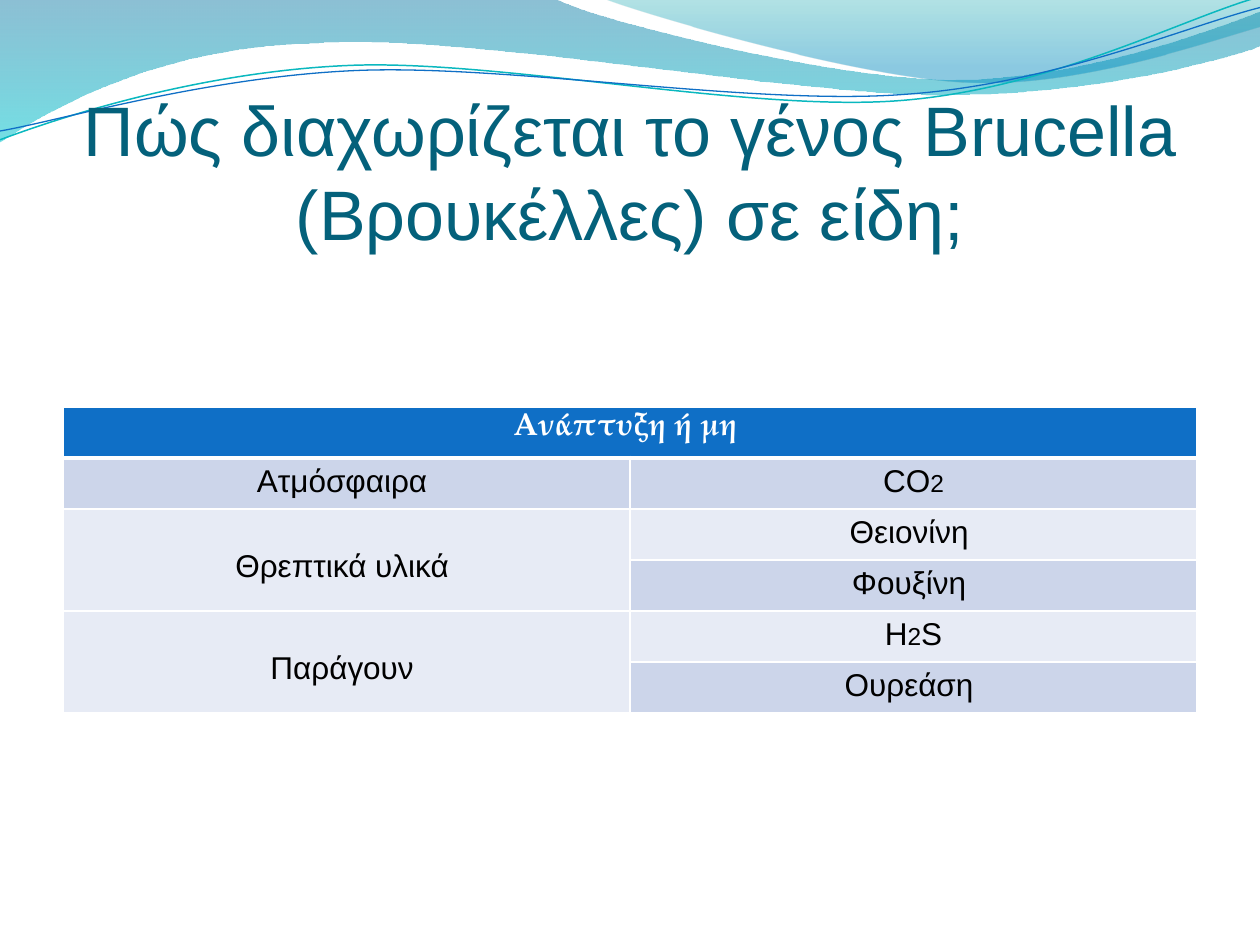
import pptx
import pptx.util
import pptx.dml.color
import pptx.enum.text
import pptx.oxml
import pptx.oxml.ns

Inches = pptx.util.Inches
RGBColor = pptx.dml.color.RGBColor
Anchor = pptx.enum.text.MSO_ANCHOR

TITLE_TEAL = RGBColor(0x04, 0x61, 0x7B)
BLUE = RGBColor(0x0F, 0x6F, 0xC6)
TURQUOISE = RGBColor(0x0A, 0xB8, 0xBF)
WAVE_BLUE = RGBColor(0x00, 0x74, 0xA1)
WAVE_CYAN = RGBColor(0x00, 0xC6, 0xCF)
CREST_GREEN = RGBColor(0x00, 0xA1, 0xA9)
CREST_BLUE = RGBColor(0x00, 0x8B, 0xBF)
BAND_DARK = RGBColor(0xCC, 0xD5, 0xEA)
BAND_LIGHT = RGBColor(0xE7, 0xEB, 0xF5)
WHITE = RGBColor(0xFF, 0xFF, 0xFF)
BLACK = RGBColor(0, 0, 0)

NAMESPACE = pptx.oxml.ns.nsdecls("a")

WAVE = [(0, 0), (4.4, -0.01),
        (4.76, 0.17, 6.64, 0.63, 7.58, 0.63), (8.53, 0.63, 9.58, 0.26, 10, 0.09),
        (10.01, 0.36),
        (9.83, 0.44, 8.7, 0.76, 7.46, 0.75), (6.22, 0.75, 3.82, 0.28, 2.57, 0.34),
        (1.29, 0.36, 0.46, 0.83, -0.01, 1.13)]
CREST = [(4.79, -0.01),
         (5.09, 0.11, 6.82, 0.62, 7.69, 0.65), (8.56, 0.69, 9.61, 0.32, 10, 0.21),
         (10, 0)]
TURQUOISE_STRAND = [(0, 1.11),
                    (0.48, 0.93, 1.58, 0.57, 2.77, 0.52),
                    (3.95, 0.47, 5.93, 0.89, 7.13, 0.8),
                    (8.33, 0.71, 9.38, 0.15, 9.98, -0.02)]
BLUE_STRAND = [(0, 1.04),
               (0.47, 0.96, 1.64, 0.61, 2.83, 0.56),
               (4.03, 0.51, 5.97, 0.84, 7.17, 0.75),
               (8.36, 0.67, 9.41, 0.21, 10, 0.06)]


def add_curve(page, segments, closed):
    knots = [(Inches(segment[-2]), Inches(segment[-1])) for segment in segments]
    builder = page.shapes.build_freeform(*knots[0])
    builder.add_line_segments(knots[1:], close=closed)
    shape = builder.convert_to_shape()
    shape.shadow.inherit = False
    lines = list(shape._element.iter(pptx.oxml.ns.qn("a:lnTo")))
    for line, segment in zip(lines, segments[1:]):
        if len(segment) == 6:
            points = "".join(
                f'<a:pt x="{Inches(x) - shape.left}" y="{Inches(y) - shape.top}"/>'
                for x, y in zip(segment[::2], segment[1::2]))
            bend = pptx.oxml.parse_xml(f"<a:cubicBezTo {NAMESPACE}>{points}</a:cubicBezTo>")
            line.getparent().replace(line, bend)
    return shape


def add_wave(page, segments, stops):
    shape = add_curve(page, segments, closed=True)
    shape.line.fill.background()
    stop_xml = "".join(
        f'<a:gs pos="{position * 1000}"><a:srgbClr val="{color}">'
        f'<a:alpha val="{alpha * 1000}"/></a:srgbClr></a:gs>'
        for position, color, alpha in stops)
    gradient = pptx.oxml.parse_xml(
        f'<a:gradFill {NAMESPACE} rotWithShape="1"><a:gsLst>{stop_xml}</a:gsLst>'
        '<a:lin ang="5400000" scaled="0"/></a:gradFill>')
    shape.line._ln.addprevious(gradient)


def add_strand(page, segments, color, width):
    shape = add_curve(page, segments, closed=False)
    shape.fill.background()
    shape.line.color.rgb = color
    shape.line.width = pptx.util.Pt(width)


def write_text(frame, text, size=18, color=BLACK, font="Arial", bold=False, small=""):
    para = frame.paragraphs[0]
    para.alignment = pptx.enum.text.PP_ALIGN.CENTER
    before, digit, after = text.partition(small) if small else (text, "", "")
    for part, part_size in ((before, size), (digit, 14), (after, size)):
        if part:
            span = para.add_run()
            span.text = part
            span.font.size = pptx.util.Pt(part_size)
            span.font.name = font
            span.font.bold = bold
            span.font.color.rgb = color


def add_title(page, text):
    box = page.shapes.add_textbox(Inches(0.5), Inches(0.77), Inches(9), Inches(1.25))
    frame = box.text_frame
    frame.word_wrap = True
    frame.vertical_anchor = Anchor.BOTTOM
    frame.margin_left = frame.margin_right = frame.margin_bottom = 0
    frame.margin_top = Inches(0.05)
    write_text(frame, text, size=40, color=TITLE_TEAL)


def style_cell(cell, fill, top=1, bottom=1):
    properties = cell._tc.get_or_add_tcPr()
    for side, width in (("L", 1), ("R", 1), ("T", top), ("B", bottom)):
        properties.append(pptx.oxml.parse_xml(
            f'<a:ln{side} {NAMESPACE} w="{width * 12700}"><a:solidFill>'
            f'<a:srgbClr val="{WHITE}"/></a:solidFill></a:ln{side}>'))
    cell.fill.solid()
    cell.fill.fore_color.rgb = fill


def add_growth_table(page):
    table = page.shapes.add_table(6, 2, Inches(0.5), Inches(3.23), Inches(9), Inches(2.43)).table
    for row in range(6):
        band = BLUE if row == 0 else BAND_DARK if row % 2 else BAND_LIGHT
        for column in range(2):
            fill = BAND_LIGHT if column == 0 and row > 1 else band
            style_cell(table.cell(row, column), fill,
                       top=3 if row == 1 else 1, bottom=3 if row == 0 else 1)

    header = table.cell(0, 0)
    header.merge(table.cell(0, 1))
    write_text(header.text_frame, "Ανάπτυξη ή μη ", color=WHITE, font="TeX Gyre Pagella", bold=True)

    write_text(table.cell(1, 0).text_frame, "Ατμόσφαιρα ")
    for row, label in ((2, "Θρεπτικά υλικά "), (4, "Παράγουν ")):
        cell = table.cell(row, 0)
        cell.merge(table.cell(row + 1, 0))
        cell.margin_top = Inches(0.32)
        write_text(cell.text_frame, label)

    values = ("CO2", "Θειονίνη ", "Φουξίνη ", "Η2S", "Ουρεάση ")
    for row, value in enumerate(values, start=1):
        write_text(table.cell(row, 1).text_frame, value, small="2")


def main():
    deck = pptx.Presentation()
    deck.slide_width, deck.slide_height = Inches(10), Inches(7.5)
    page = deck.slides.add_slide(deck.slide_layouts[6])
    add_wave(page, WAVE, [(0, WAVE_BLUE, 45), (100, WAVE_CYAN, 55)])
    add_wave(page, CREST, [(0, CREST_GREEN, 30), (80, CREST_BLUE, 45)])
    add_strand(page, TURQUOISE_STRAND, TURQUOISE, 0.85)
    add_strand(page, BLUE_STRAND, BLUE, 0.75)
    add_title(page, "Πώς διαχωρίζεται το γένος Brucella (Βρουκέλλες) σε είδη;")
    add_growth_table(page)
    deck.save("out.pptx")


if __name__ == "__main__":
    main()
